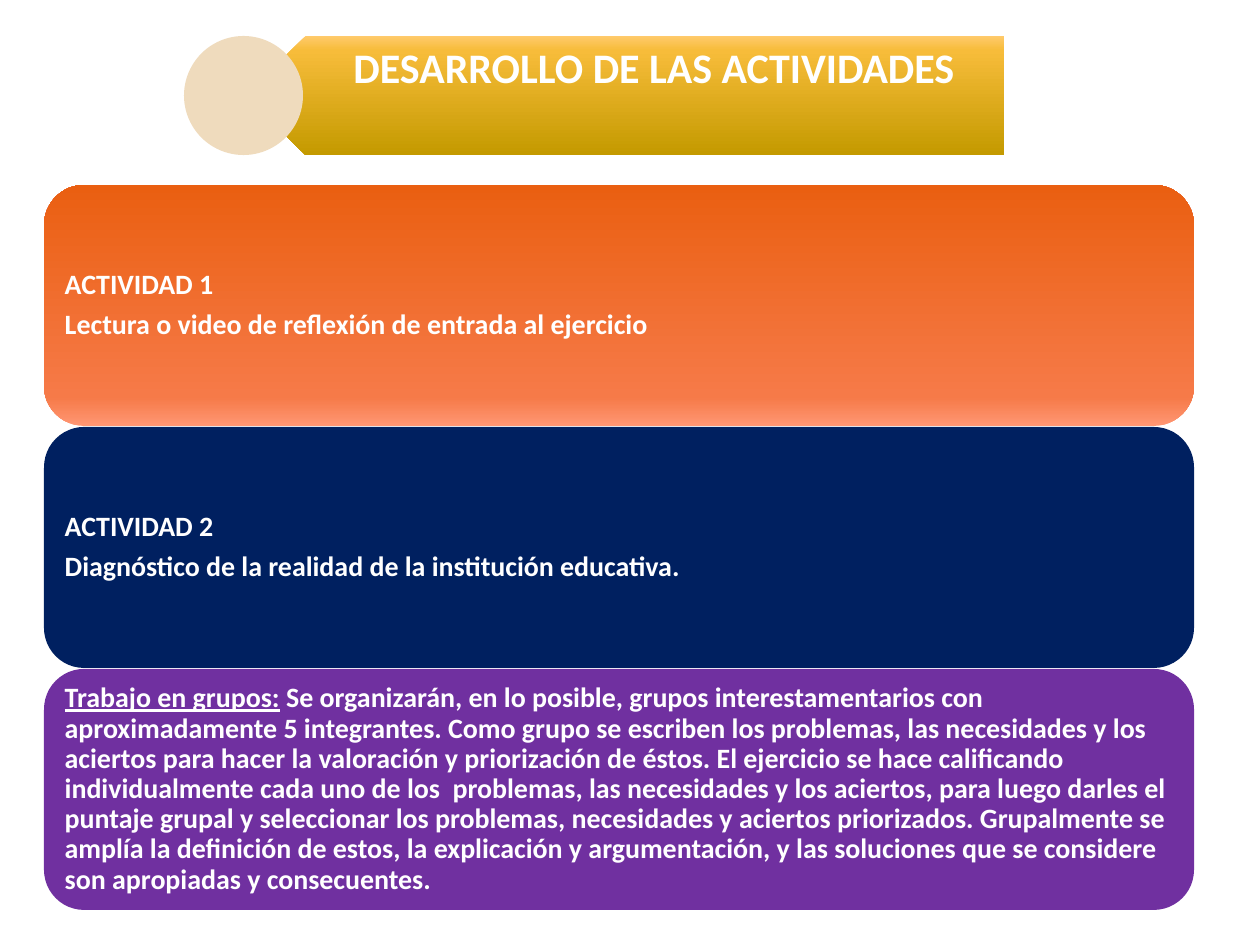
"""Build the slide that presents the workshop activities."""
import copy
from dataclasses import dataclass

import pptx
import pptx.dml.color
import pptx.enum.shapes
import pptx.enum.text
import pptx.util

RGB = pptx.dml.color.RGBColor
SHAPE = pptx.enum.shapes.MSO_SHAPE
ALIGN = pptx.enum.text.PP_ALIGN

EMU_PER_PX = 914400 / 126
WHITE = RGB(0xFF, 0xFF, 0xFF)
SAND = RGB(0xEF, 0xDB, 0xBD)
NAVY = RGB(0x00, 0x20, 0x60)
PURPLE = RGB(0x70, 0x30, 0xA0)
ORANGES = (RGB(0xFF, 0x96, 0x73), RGB(0xF6, 0x7A, 0x48), RGB(0xEA, 0x5F, 0x11))
GOLDS = (RGB(0xFF, 0xCA, 0x6B), RGB(0xF7, 0xBC, 0x3A), RGB(0xC4, 0x9A, 0x00))
STOPS = (0, 0.12, 1)

CARD_LEFT, CARD_TOP, CARD_WIDTH, CARD_HEIGHT, CARD_PITCH = 44, 185, 1150, 241, 242
BANNER_TOP, BANNER_HEIGHT = 36, 119


@dataclass
class Card:
    paragraphs: list[str]
    colors: tuple[RGB, ...]
    lead: str = ""


CARDS = [
    Card(["ACTIVIDAD 1", "Lectura o video de reflexión de entrada al ejercicio"], ORANGES),
    Card(["ACTIVIDAD 2", "Diagnóstico de la realidad de la institución educativa."], (NAVY,)),
    Card(
        [" Se organizarán, en lo posible, grupos interestamentarios con aproximadamente "
         "5 integrantes. Como grupo se escriben los problemas, las necesidades y los "
         "aciertos para hacer la valoración y priorización de éstos. El ejercicio se hace "
         "calificando individualmente cada uno de los  problemas, las necesidades y los "
         "aciertos, para luego darles el puntaje grupal y seleccionar los problemas, "
         "necesidades y aciertos priorizados. Grupalmente se amplía la definición de "
         "estos, la explicación y argumentación, y las soluciones que se considere son "
         "apropiadas y consecuentes."],
        (PURPLE,),
        lead="Trabajo en grupos:",
    ),
]


def px(n: int) -> pptx.util.Emu:
    return pptx.util.Emu(round(n * EMU_PER_PX))


def paint(fill, colors: tuple[RGB, ...]) -> None:
    if len(colors) == 1:
        fill.solid()
        fill.fore_color.rgb = colors[0]
        return
    fill.gradient()
    fill.gradient_angle = 90
    gs = fill._fill._gradFill.gsLst
    gs.append(copy.deepcopy(gs[-1]))
    for stop, position, color in zip(fill.gradient_stops, STOPS, colors):
        stop.position = position
        stop.color.rgb = color


def add_block(s, kind, left: int, top: int, width: int, height: int, colors: tuple[RGB, ...]):
    sp = s.shapes.add_shape(kind, px(left), px(top), px(width), px(height))
    sp.shadow.inherit = False
    sp.line.fill.background()
    paint(sp.fill, colors)
    return sp


def format_text(tf, size: int, align, insets: tuple[int, int, int, int]) -> None:
    tf.word_wrap = True
    tf.auto_size = pptx.enum.text.MSO_AUTO_SIZE.NONE
    tf.vertical_anchor = pptx.enum.text.MSO_ANCHOR.MIDDLE
    tf.margin_left, tf.margin_top, tf.margin_right, tf.margin_bottom = map(px, insets)
    for p in tf.paragraphs:
        p.alignment = align
        p.line_spacing = 0.9
        p.space_before = pptx.util.Pt(0)
        p.space_after = pptx.util.Pt(size * 0.35)
        p.font.size = pptx.util.Pt(size)
        for r in p.runs:
            r.font.name = "Calibri"
            r.font.size = pptx.util.Pt(size)
            r.font.bold = True
            r.font.color.rgb = WHITE


def add_card(s, card: Card, top: int) -> None:
    sp = add_block(s, SHAPE.ROUNDED_RECTANGLE, CARD_LEFT, top, CARD_WIDTH, CARD_HEIGHT, card.colors)
    tf = sp.text_frame
    tf.text = "\n".join(card.paragraphs)
    if card.lead:
        p = tf.paragraphs[0]
        p.text = card.lead
        p.runs[0].font.underline = True
        p.add_run().text = card.paragraphs[0]
    format_text(tf, 16, ALIGN.LEFT, (9, 9, 9, 9))


def add_banner(s) -> None:
    arrow = add_block(s, SHAPE.PENTAGON, 246, BANNER_TOP, 758, BANNER_HEIGHT, GOLDS)
    arrow.rotation = 180
    title = s.shapes.title
    title.left, title.top = px(275), px(BANNER_TOP)
    title.width, title.height = px(729), px(BANNER_HEIGHT)
    title.text_frame.text = "DESARROLLO DE LAS ACTIVIDADES\v"
    format_text(title.text_frame, 24, ALIGN.CENTER, (53, 13, 24, 13))
    arrow.element.addnext(title.element)
    add_block(s, SHAPE.OVAL, 184, BANNER_TOP, BANNER_HEIGHT, BANNER_HEIGHT, (SAND,))


def main() -> None:
    prs = pptx.Presentation()
    prs.slide_width, prs.slide_height = px(1260), px(945)
    s = prs.slides.add_slide(prs.slide_layouts[5])
    for i, card in enumerate(CARDS):
        add_card(s, card, CARD_TOP + i * CARD_PITCH)
    add_banner(s)
    prs.save("out.pptx")


if __name__ == "__main__":
    main()
